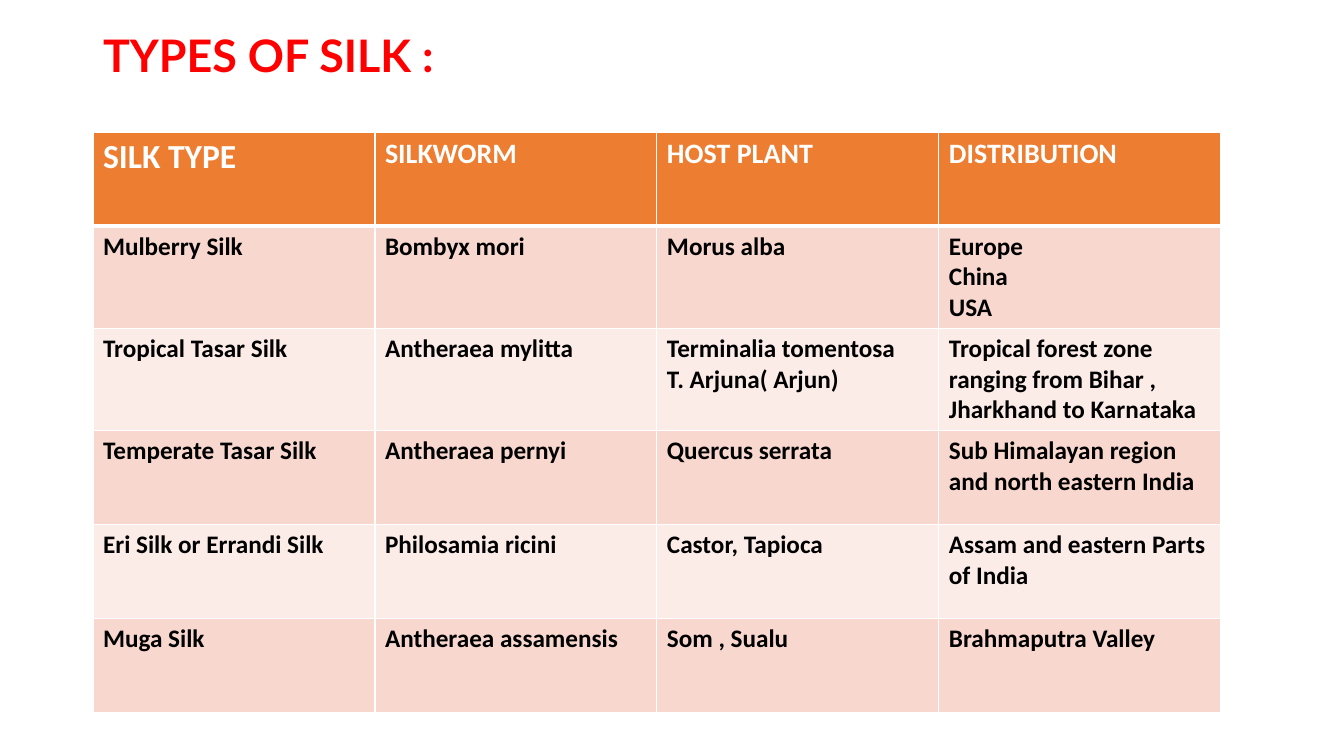
from lxml import etree
from pptx import Presentation
from pptx.dml.color import RGBColor
from pptx.enum import text
from pptx.oxml.ns import qn
from pptx.util import Pt

PX = 914400 / 100.8
TITLE_ONLY = 5

HEADINGS = ["SILK TYPE", "SILKWORM", "HOST PLANT", "DISTRIBUTION"]
SILKS = [
    ["Mulberry Silk", "Bombyx mori", "Morus alba", "Europe\nChina\nUSA"],
    ["Tropical Tasar Silk", "Antheraea mylitta",
     "Terminalia tomentosa\nT. Arjuna( Arjun)",
     "Tropical forest zone ranging from Bihar , Jharkhand to Karnataka"],
    ["Temperate Tasar Silk", "Antheraea pernyi", "Quercus serrata",
     "Sub Himalayan region and north eastern India"],
    ["Eri Silk or Errandi Silk", "Philosamia ricini", "Castor, Tapioca",
     "Assam and eastern Parts of India"],
    ["Muga Silk", "Antheraea assamensis", "Som , Sualu", "Brahmaputra Valley"],
]


def px(length):
    return round(length * PX)


def colour(hex_value):
    return RGBColor.from_string(hex_value)


class SilkSlide:
    RED, WHITE, BLACK, ORANGE = "FF0000", "FFFFFF", "000000", "ED7D31"
    BANDS = ["F8D7CE", "FCECE8"]

    def __init__(self, deck):
        self.slide = deck.slides.add_slide(deck.slide_layouts[TITLE_ONLY])

    def set_words(self, frame, words, font, size, ink):
        frame.text = words
        style = {"name": font, "size": Pt(size), "bold": True}
        for paragraph in frame.paragraphs:
            paragraph.alignment = text.PP_ALIGN.LEFT
            for run in paragraph.runs:
                for key, value in style.items():
                    setattr(run.font, key, value)
                run.font.color.rgb = colour(ink)

    def title(self, words, left, top, width, height):
        heading = self.slide.shapes.title
        box = {"left": left, "top": top, "width": width, "height": height}
        for key, value in box.items():
            setattr(heading, key, px(value))
        frame = heading.text_frame
        self.set_words(frame, words, "Lato", 32, self.RED)
        layout = {"word_wrap": True, "auto_size": text.MSO_AUTO_SIZE.NONE,
                  "vertical_anchor": text.MSO_ANCHOR.MIDDLE}
        for key, value in layout.items():
            setattr(frame, key, value)
        frame.paragraphs[0].line_spacing = 0.9

    def borders(self, cell, widths):
        """Draw white cell edges; widths maps L, R, T, B to points."""
        properties = cell._tc.get_or_add_tcPr()
        for side, width in widths.items():
            edge = etree.SubElement(properties, qn(f"a:ln{side}"), w=str(Pt(width)))
            fill = etree.SubElement(edge, qn("a:solidFill"))
            etree.SubElement(fill, qn("a:srgbClr"), val=self.WHITE)

    def table(self, rows, left, top, column_width, row_height):
        columns = len(rows[0])
        grid = self.slide.shapes.add_table(
            len(rows), columns, px(left), px(top),
            px(column_width * columns), px(row_height * len(rows))).table
        for column in grid.columns:
            column.width = px(column_width)
        for r, words in enumerate(rows):
            grid.rows[r].height = px(row_height)
            for c, entry in enumerate(words):
                self.cell(grid.cell(r, c), r, c, entry)

    def cell(self, cell, r, c, entry):
        header = r == 0
        size = (24 if c == 0 else 20) if header else 18
        self.set_words(cell.text_frame, entry, "Calibri", size,
                       self.WHITE if header else self.BLACK)
        self.borders(cell, {"L": 1, "R": 1, "T": 3 if r == 1 else 1,
                            "B": 3 if header else 1})
        cell.fill.solid()
        cell.fill.fore_color.rgb = colour(
            self.ORANGE if header else self.BANDS[(r - 1) % 2])


def main():
    deck = Presentation()
    deck.slide_width, deck.slide_height = px(1344), px(756)
    silk = SilkSlide(deck)
    silk.title("TYPES OF SILK :", 93, 40, 1159, 36)
    silk.table([HEADINGS] + SILKS, 93, 132, 282, 94)
    deck.save("out.pptx")


if __name__ == "__main__":
    main()
